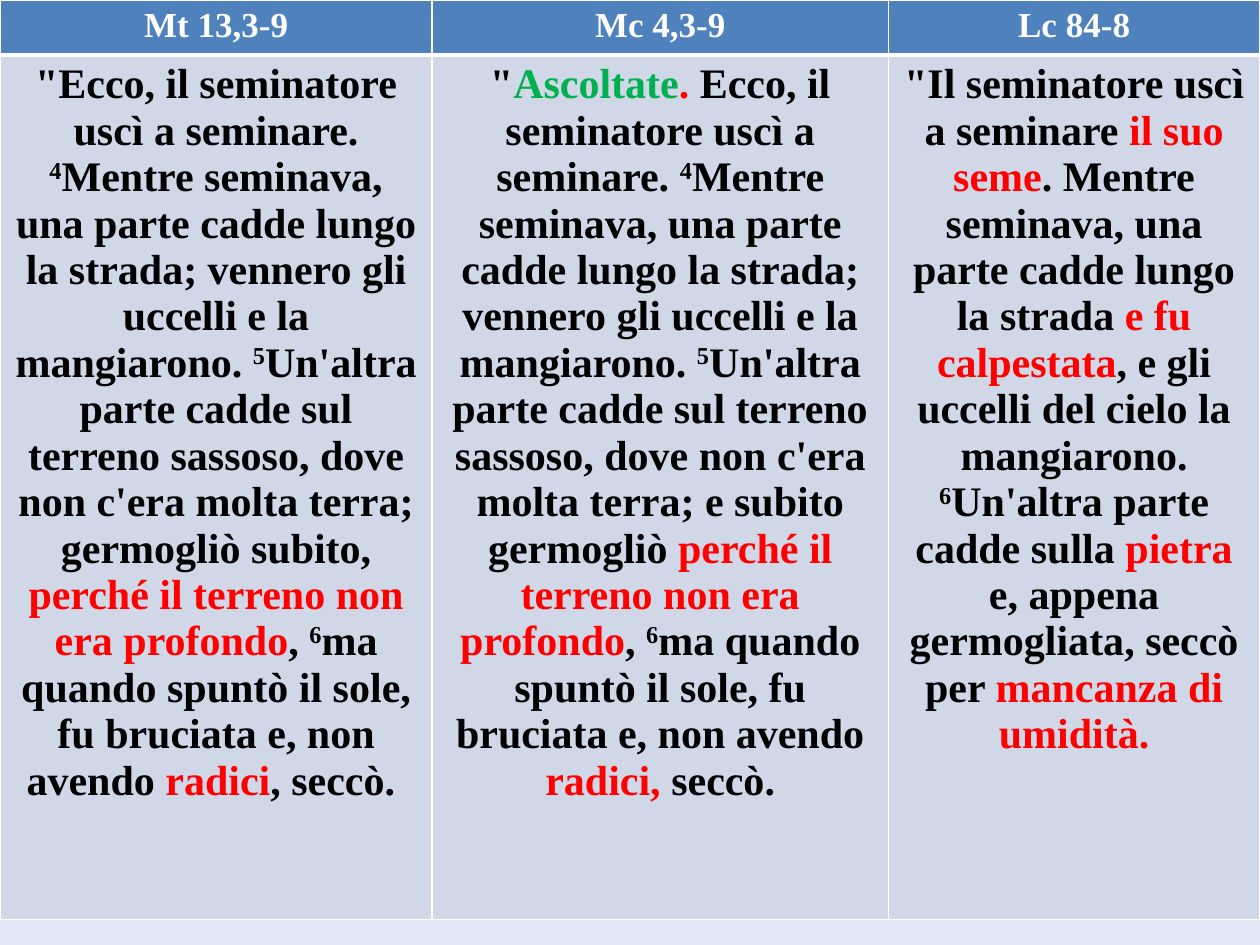
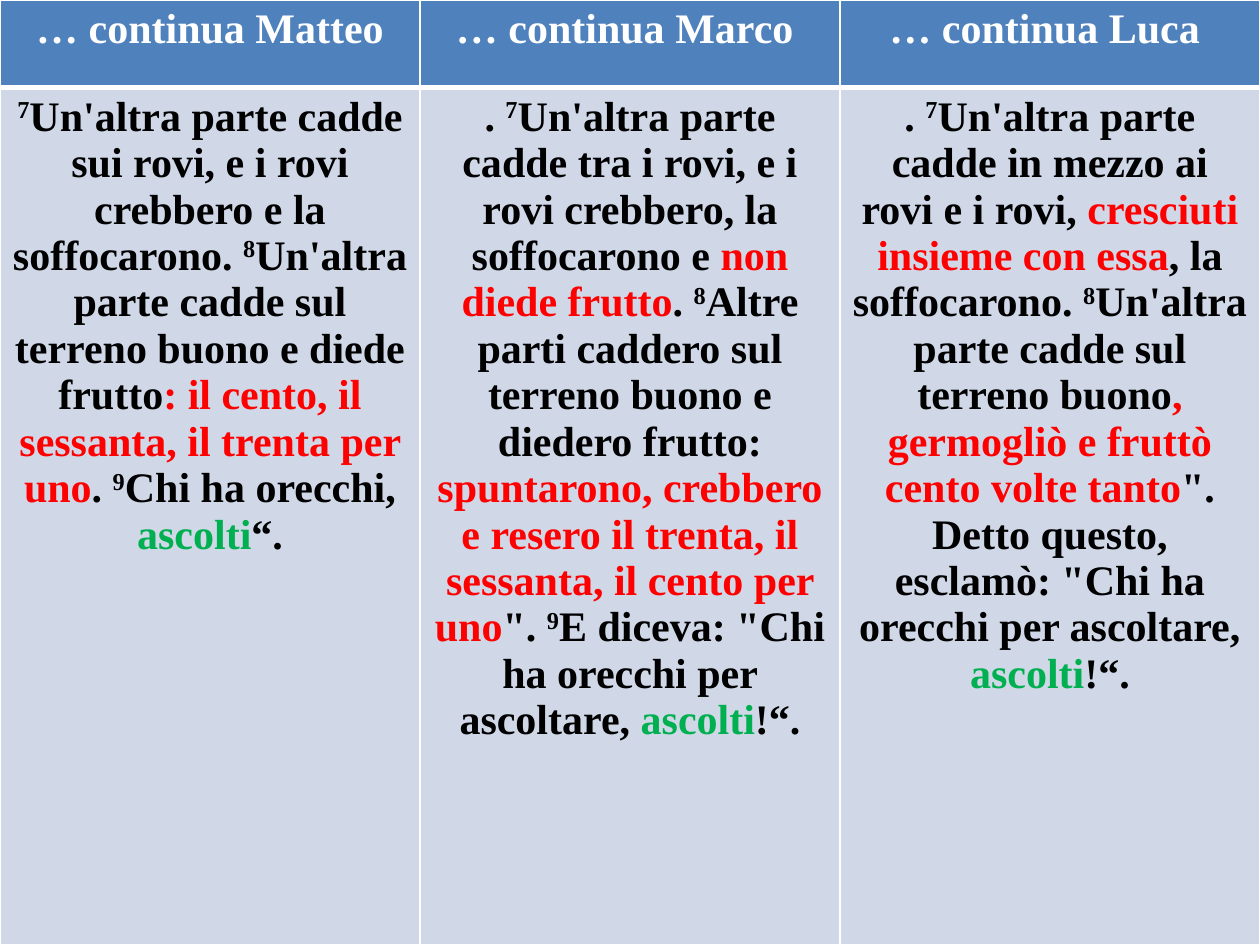
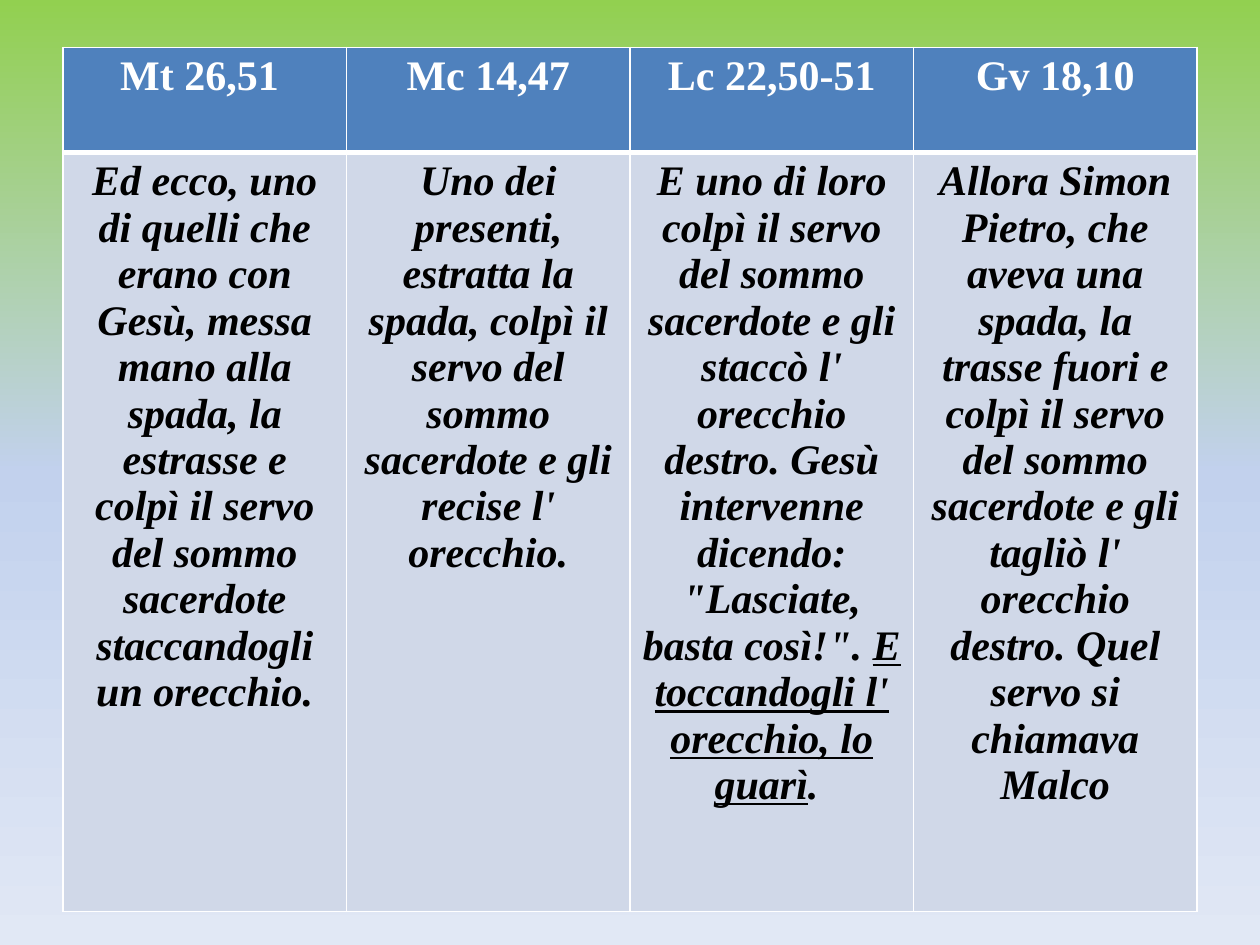
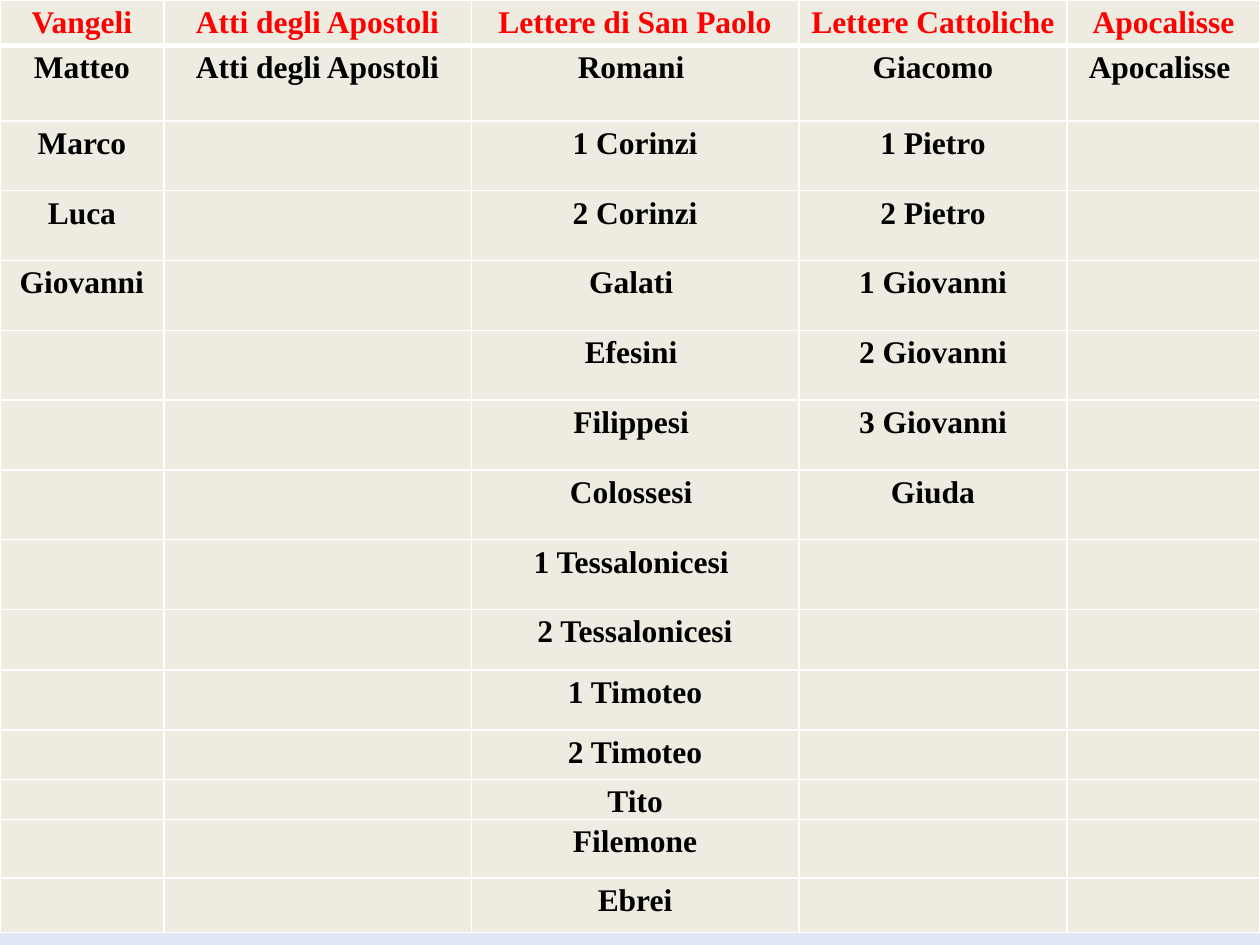
from copy import deepcopy
from dataclasses import dataclass
from itertools import zip_longest

from pptx import Presentation
from pptx.dml.color import RGBColor
from pptx.enum.text import PP_ALIGN
from pptx.oxml.ns import qn
from pptx.util import Pt
from lxml.etree import SubElement


@dataclass(frozen=True)
class Theme:
    font: str = "Times New Roman"
    white: str = "FFFFFF"
    black: str = "000000"
    red: str = "FF0000"
    green: str = "00B050"
    header_blue: str = "4F81BD"
    body_blue: str = "D0D8E8"
    cream: str = "EEECE1"
    background: tuple = ((0, "92D050"), (0.5, "C2D1ED"), (1, "E1E8F5"))
    large: float = 24
    medium: float = 20
    small: float = 18
    thin_border: float = 1
    thick_border: float = 3


THEME = Theme()


@dataclass(frozen=True)
class Span:
    text: str
    color: str = ""
    raised: bool = False
    underlined: bool = False


@dataclass(frozen=True)
class CellStyle:
    fill: str
    color: str
    size: float = THEME.large
    italic: bool = False
    compact: bool = False


def red(text):
    return Span(text, THEME.red)


def green(text):
    return Span(text, THEME.green)


def verse(number):
    return Span(str(number), raised=True)


def underlined(text):
    return Span(text, underlined=True)


HEADER = CellStyle(THEME.header_blue, THEME.white)
SMALL_HEADER = CellStyle(THEME.header_blue, THEME.white, THEME.medium)
BODY = CellStyle(THEME.body_blue, THEME.black)
ITALIC_BODY = CellStyle(THEME.body_blue, THEME.black, italic=True)
BOOK_HEADER = CellStyle(THEME.cream, THEME.red, THEME.small, compact=True)
BOOK = CellStyle(THEME.cream, THEME.black, THEME.small, compact=True)

SOWER_START = {
    "Mt 13,3-9": [
        '"Ecco, il seminatore uscì a seminare. ',
        verse(4),
        "Mentre seminava, una parte cadde lungo la strada; "
        "vennero gli uccelli e la mangiarono. ",
        verse(5),
        "Un'altra parte cadde sul terreno sassoso, dove non c'era molta terra; "
        "germogliò subito, ",
        red("perché il terreno non era profondo"),
        ", ",
        verse(6),
        "ma quando spuntò il sole, fu bruciata e, non avendo ",
        red("radici"),
        ", seccò. ",
    ],
    "Mc 4,3-9": [
        '"',
        green("Ascoltate"),
        red("."),
        " Ecco, il seminatore uscì a seminare. ",
        verse(4),
        "Mentre seminava, una parte cadde lungo la strada; "
        "vennero gli uccelli e la mangiarono. ",
        verse(5),
        "Un'altra parte cadde sul terreno sassoso, dove non c'era molta terra; "
        "e subito germogliò ",
        red("perché il terreno non era profondo"),
        ", ",
        verse(6),
        "ma quando spuntò il sole, fu bruciata e, non avendo ",
        red("radici,"),
        " seccò.",
    ],
    "Lc 84-8": [
        '"Il seminatore uscì a seminare ',
        red("il suo seme"),
        ". Mentre seminava, una parte cadde lungo la strada ",
        red("e fu calpestata"),
        ", e gli uccelli del cielo la mangiarono. ",
        verse(6),
        "Un'altra parte cadde sulla ",
        red("pietra"),
        " e, appena germogliata, seccò per ",
        red("mancanza di umidità."),
    ],
}

SOWER_END = {
    "… continua Matteo": [
        verse(7),
        "Un'altra parte cadde sui rovi, e i rovi crebbero e la soffocarono. ",
        verse(8),
        "Un'altra parte cadde sul terreno buono e diede frutto",
        red(": il cento, il sessanta, il trenta per uno"),
        ". ",
        verse(9),
        "Chi ha orecchi,",
        green(" ascolti"),
        "“.",
    ],
    "… continua Marco ": [
        ". ",
        verse(7),
        "Un'altra parte cadde tra i rovi, e i rovi crebbero, la soffocarono e ",
        red("non diede frutto"),
        ". ",
        verse(8),
        "Altre parti caddero sul terreno buono e diedero frutto: ",
        red("spuntarono, crebbero e resero il trenta, il sessanta, il cento per uno"),
        '". ',
        verse(9),
        'E diceva: "Chi ha orecchi per ascoltare, ',
        green("ascolti"),
        "!“.",
    ],
    "… continua Luca ": [
        ". ",
        verse(7),
        "Un'altra parte cadde in mezzo ai rovi e i rovi, ",
        red("cresciuti insieme con essa"),
        ", la soffocarono. ",
        verse(8),
        "Un'altra parte cadde sul terreno buono",
        red(", germogliò e fruttò cento volte tanto"),
        '". Detto questo, esclamò: "Chi ha orecchi per ascoltare, ',
        green("ascolti"),
        "!“.",
    ],
}

SEVERED_EAR = {
    "Mt 26,51 ": [
        "Ed ecco, uno di quelli che erano con Gesù, messa mano alla spada, "
        "la estrasse e colpì il servo del sommo sacerdote "
        "staccandogli un orecchio.",
    ],
    "Mc 14,47": [
        "Uno dei presenti, estratta la spada, colpì il servo "
        "del sommo sacerdote e gli recise l' orecchio.",
    ],
    "Lc 22,50-51": [
        "E uno di loro colpì il servo del sommo sacerdote e gli staccò "
        "l' orecchio destro. Gesù intervenne dicendo: "
        '"Lasciate, basta così!". ',
        underlined("E toccandogli l' orecchio, lo guarì"),
        ". ",
    ],
    "Gv 18,10": [
        "Allora Simon Pietro, che aveva una spada, la trasse fuori e colpì "
        "il servo del sommo sacerdote e gli tagliò l' orecchio destro. "
        "Quel servo si chiamava Malco",
    ],
}

NEW_TESTAMENT = {
    "Vangeli": ["Matteo", "Marco", "Luca", "Giovanni"],
    "Atti degli Apostoli": ["Atti degli Apostoli"],
    "Lettere di San Paolo": [
        "Romani ", "1 Corinzi", "2 Corinzi", "Galati ", "Efesini ",
        "Filippesi ", "Colossesi ", "1 Tessalonicesi ", "2 Tessalonicesi",
        "1 Timoteo", "2 Timoteo", "Tito", "Filemone", "Ebrei",
    ],
    "Lettere Cattoliche": [
        "Giacomo", "1 Pietro", "2 Pietro", "1 Giovanni", "2 Giovanni",
        "3 Giovanni", "Giuda",
    ],
    "Apocalisse": ["Apocalisse "],
}


def set_background(master):
    fill = master.background.fill
    fill.gradient()
    fill.gradient_angle = 270
    stop_list = next(master.element.iter(qn("a:gsLst")))
    stop_list.append(deepcopy(stop_list[-1]))
    for stop, (position, color) in zip(fill.gradient_stops, THEME.background):
        stop.position = position
        stop.color.rgb = RGBColor.from_string(color)


def set_borders(cell, top, bottom):
    properties = cell._tc.get_or_add_tcPr()
    widths = {"L": THEME.thin_border, "R": THEME.thin_border, "T": top, "B": bottom}
    for side, width in widths.items():
        line = SubElement(properties, qn(f"a:ln{side}"), w=str(Pt(width)))
        solid = SubElement(line, qn("a:solidFill"))
        SubElement(solid, qn("a:srgbClr"), val=THEME.white)


def add_span(paragraph, span, style):
    run = paragraph.add_run()
    run.text = span.text
    font = run.font
    font.name = THEME.font
    font.size = Pt(style.size)
    font.bold = True
    font.italic = style.italic
    font.underline = span.underlined
    font.color.rgb = RGBColor.from_string(span.color or style.color)
    if span.raised:
        run._r.get_or_add_rPr().set("baseline", "30000")


def fill_cell(cell, passage, style):
    cell.fill.solid()
    cell.fill.fore_color.rgb = RGBColor.from_string(style.fill)
    paragraph = cell.text_frame.paragraphs[0]
    paragraph.alignment = PP_ALIGN.CENTER
    if style.compact:
        cell.margin_left = cell.margin_right = Pt(5)
        cell.margin_top = cell.margin_bottom = 0
        paragraph.line_spacing = 1.15
    for part in passage:
        add_span(paragraph, part if isinstance(part, Span) else Span(part), style)


def add_column_table(slide, columns, widths, heights, header, body, left=0, top=0):
    rows = [[[title] for title in columns], *zip_longest(*columns.values(), fillvalue=[])]
    table = slide.shapes.add_table(
        len(rows), len(columns), Pt(left), Pt(top), Pt(sum(widths)), Pt(sum(heights))
    ).table
    table.horz_banding = False
    for column, width in zip(table.columns, widths):
        column.width = Pt(width)
    for index, (row, height, passages) in enumerate(zip(table.rows, heights, rows)):
        row.height = Pt(height)
        top_border = THEME.thick_border if index == 1 else THEME.thin_border
        bottom_border = THEME.thick_border if index == 0 else THEME.thin_border
        for cell, passage in zip(row.cells, passages):
            set_borders(cell, top_border, bottom_border)
            fill_cell(cell, passage, body if index else header)


def single_row(columns):
    return {title: [passage] for title, passage in columns.items()}


def book_rows(columns):
    return {title: [[book] for book in books] for title, books in columns.items()}


def main():
    presentation = Presentation()
    presentation.slide_width = Pt(720)
    presentation.slide_height = Pt(540)
    set_background(presentation.slide_master)
    blank = presentation.slide_layouts[6]

    def new_slide():
        return presentation.slides.add_slide(blank)

    add_column_table(
        new_slide(), single_row(SOWER_START),
        [247, 260.6, 212.4], [31.5, 494], SMALL_HEADER, BODY,
    )
    add_column_table(
        new_slide(), single_row(SOWER_END), [240] * 3, [50, 490], HEADER, BODY,
    )
    add_column_table(
        new_slide(), single_row(SEVERED_EAR),
        [162] * 4, [60, 434], HEADER, ITALIC_BODY, left=36, top=27,
    )
    add_column_table(
        new_slide(), book_rows(NEW_TESTAMENT),
        [93.6, 175.7, 187.2, 153.3, 110.2],
        [25.9, 43.2, *[39.9] * 7, 34.6, 34.3, 28.3, 22.8, 33.5, 31],
        BOOK_HEADER, BOOK,
    )
    presentation.save("out.pptx")


if __name__ == "__main__":
    main()
